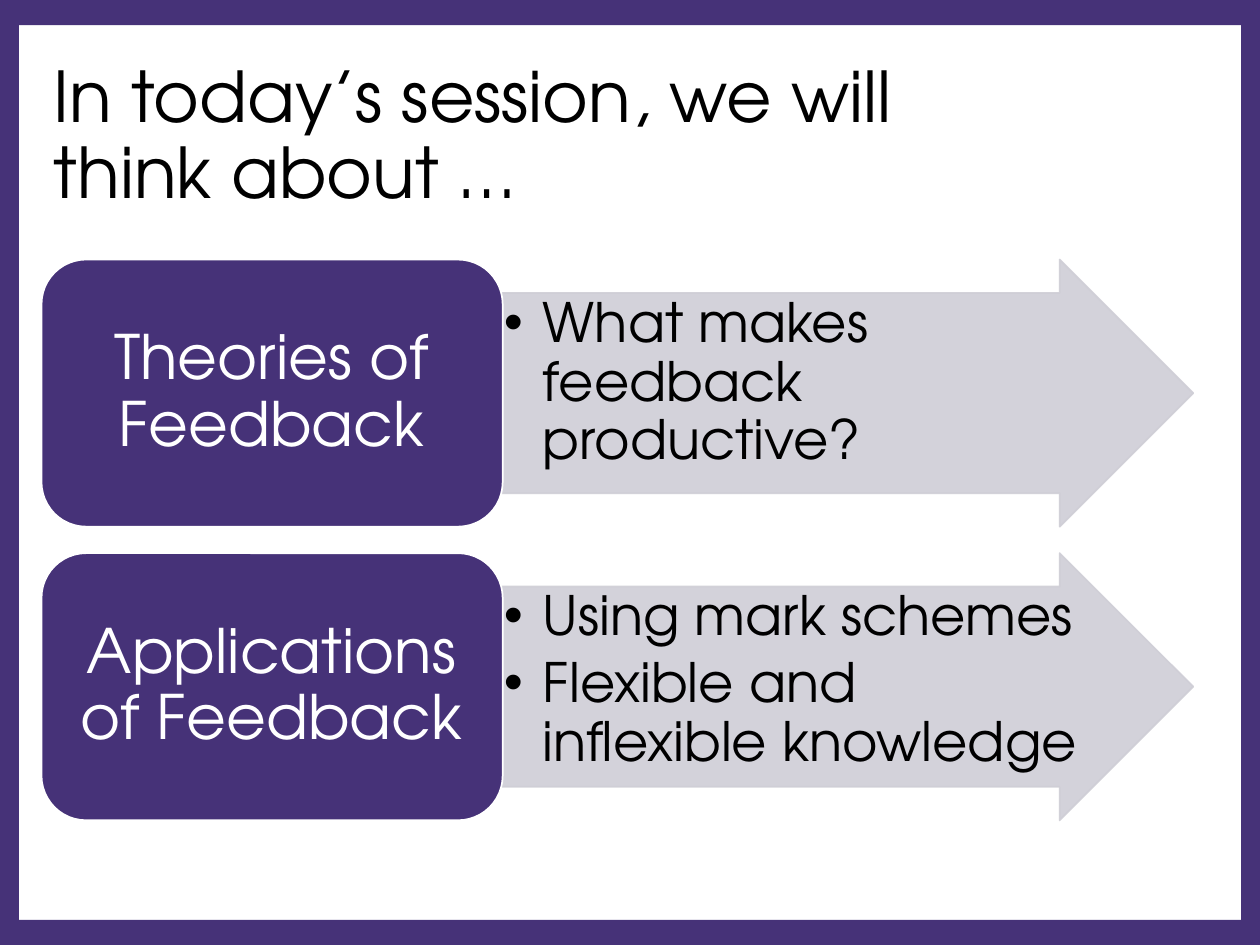
from lxml import etree
from pptx import Presentation
from pptx import util as u
from pptx.dml.color import RGBColor
from pptx.enum import shapes, text
from pptx.oxml import ns

PURPLE = RGBColor(0x46, 0x32, 0x78)
GREY = RGBColor(0xCF, 0xCE, 0xD6)
WHITE = RGBColor(0xFF, 0xFF, 0xFF)
BLACK = RGBColor(0, 0, 0)

TOPICS = [
    ("Theories of Feedback", ["What makes feedback productive?"]),
    ("Applications of Feedback",
     ["Using mark schemes", "Flexible and inflexible knowledge"]),
]


class Page:
    font = "TeX Gyre Adventor"
    columns, rows = 100, 75

    def __init__(self, deck):
        self.slide = deck.slides.add_slide(deck.slide_layouts[6])
        self.column = deck.slide_width / self.columns
        self.row = deck.slide_height / self.rows

    def place(self, left, top, width, height):
        return (round(left * self.column), round(top * self.row),
                round(width * self.column), round(height * self.row))

    def shape(self, kind, area, fill, line=None, opacity=None):
        shape = self.slide.shapes.add_shape(kind, *self.place(*area))
        shape.shadow.inherit = False
        shape.fill.solid()
        shape.fill.fore_color.rgb = fill
        if line is None:
            shape.line.fill.background()
        else:
            shape.line.color.rgb = line
            shape.line.width = u.Pt(1)
        if opacity is not None:
            for color in shape._element.spPr.iter(ns.qn("a:srgbClr")):
                etree.SubElement(color, ns.qn("a:alpha"), val=str(opacity * 1000))
        return shape

    def text(self, area, lines, size, color, margins=(0.1, 0.05), after=0,
             align=text.PP_ALIGN.LEFT, anchor=text.MSO_ANCHOR.MIDDLE, bullet=False):
        box = self.slide.shapes.add_textbox(*self.place(*area))
        frame = box.text_frame
        frame.word_wrap = True
        frame.vertical_anchor = anchor
        frame.margin_left = frame.margin_right = u.Inches(margins[0])
        frame.margin_top = frame.margin_bottom = u.Inches(margins[1])
        frame.text = "\n".join(lines)
        for para in frame.paragraphs:
            if bullet:
                self.bullet(para)
            para.alignment = align
            para.line_spacing = 0.9
            para.space_after = u.Pt(after)
            for span in para.runs:
                span.font.name = self.font
                span.font.size = u.Pt(size)
                span.font.color.rgb = color
        return box

    def bullet(self, para):
        indent = u.Inches(0.31)
        properties = para._p.get_or_add_pPr()
        properties.set("marL", str(indent))
        properties.set("indent", str(-indent))
        etree.SubElement(properties, ns.qn("a:buFont"), typeface="Arial")
        etree.SubElement(properties, ns.qn("a:buChar"), char="•")

    def border(self):
        side, band = 1.5, 2
        for left in (0, self.columns - side):
            self.shape(shapes.MSO_SHAPE.RECTANGLE,
                       (left, 0, side, self.rows), PURPLE)
        for top in (0, self.rows - band):
            self.shape(shapes.MSO_SHAPE.RECTANGLE,
                       (0.5, top, 98.9, band), PURPLE)

    def topic(self, top, name, points):
        height = 21.2
        arrow = self.shape(shapes.MSO_SHAPE.RIGHT_ARROW,
                           (39.8, top, 54.9, height), GREY, GREY, opacity=90)
        arrow.adjustments[0] = 0.75
        arrow.adjustments[1] = 0.5
        self.text((39.8, top + height / 8, 47, height * 0.75), points, 31, BLACK,
                  margins=(0.02, 0.02), after=4.6,
                  anchor=text.MSO_ANCHOR.TOP, bullet=True)
        self.shape(shapes.MSO_SHAPE.ROUNDED_RECTANGLE,
                   (3.3, top, 36.6, height), PURPLE, WHITE)
        self.text((4.3, top + 1, 34.5, height - 2), [name], 35, WHITE,
                  margins=(0.15, 0.07), align=text.PP_ALIGN.CENTER)


def main():
    deck = Presentation()
    deck.slide_width = u.Inches(10)
    deck.slide_height = u.Inches(7.5)
    page = Page(deck)
    page.border()
    page.text((3.3, 3.7, 86.2, 14.5),
              ["In today’s session, we will \vthink about …"], 40, BLACK)
    for index, (name, points) in enumerate(TOPICS):
        page.topic(20.6 + 23.3 * index, name, points)
    deck.save("out.pptx")


if __name__ == "__main__":
    main()
